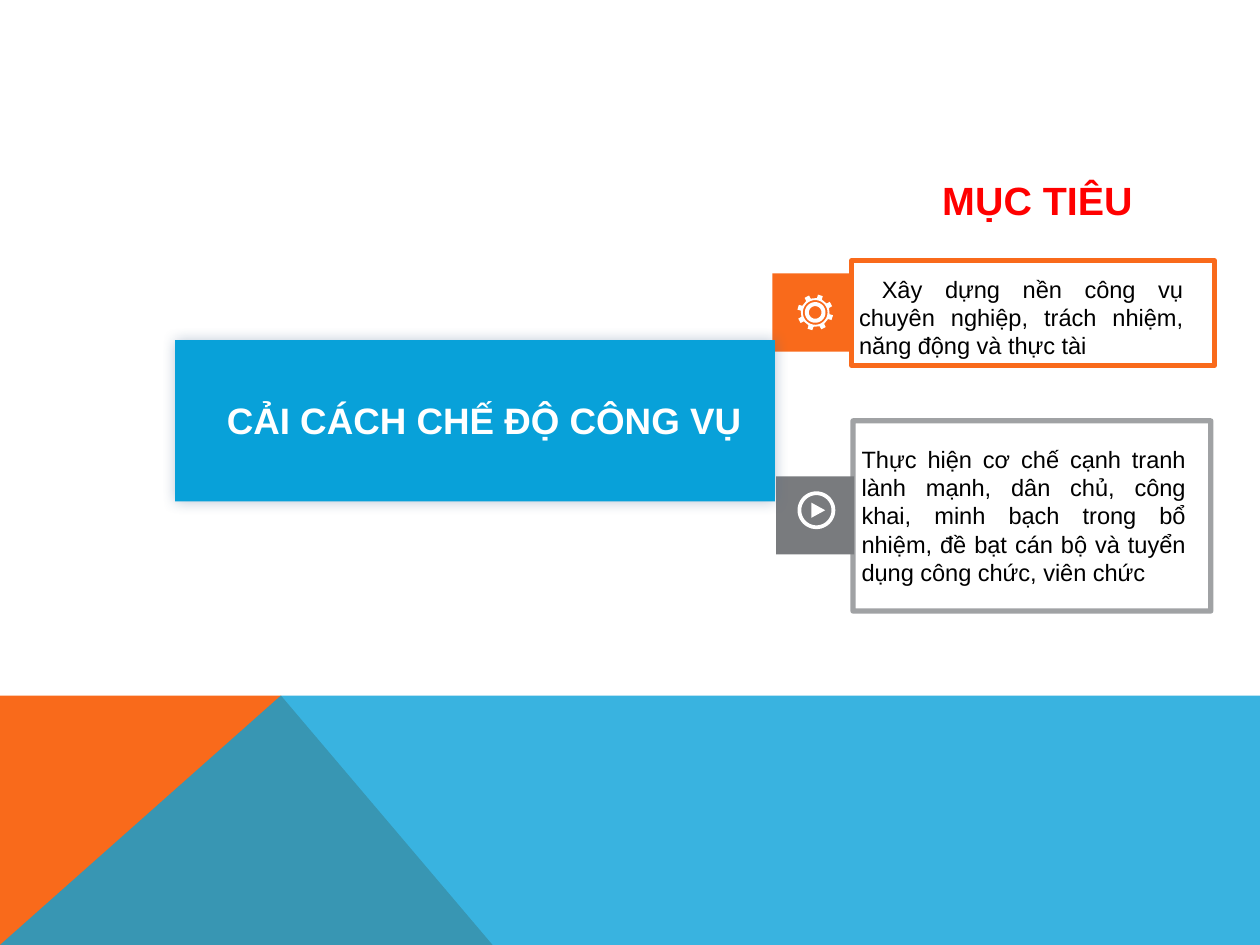
from math import cos, pi, sin

from lxml.etree import SubElement
from pptx import Presentation
from pptx.dml.color import RGBColor
from pptx.enum.shapes import MSO_SHAPE
from pptx.enum.text import MSO_ANCHOR, MSO_AUTO_SIZE, PP_ALIGN
from pptx.oxml.ns import qn
from pptx.util import Inches, Pt

ORANGE = RGBColor(0xF9, 0x6A, 0x1B)
BLUE = RGBColor(0x08, 0xA1, 0xD9)
GRAY = RGBColor(0x79, 0x7B, 0x7E)
SHADOW = RGBColor(0x50, 0x6E, 0x94)
RED = RGBColor(0xFF, 0, 0)
BLACK = RGBColor(0, 0, 0)
WHITE = RGBColor(0xFF, 0xFF, 0xFF)

COLUMNS, ROWS = 100, 75  # square grid cells
CELL = Inches(0.1)


def cells(*values):
    return [round(value * CELL) for value in values]


def set_opacity(color_parent, percent):
    color = next(color_parent.iter(qn("a:srgbClr")))
    SubElement(color, qn("a:alpha"), val=str(percent * 1000))


def circle(x, y, radius, steps=48):
    return [(x + radius * cos(2 * pi * i / steps), y + radius * sin(2 * pi * i / steps))
            for i in range(steps)]


def gear(x, y, inner, outer, teeth=8, start=-73):
    """Outline with a flat-topped tooth at each equal turn."""
    points = []
    for tooth in range(teeth):
        for offset, radius in ((-10, inner), (-8, outer), (8, outer), (10, inner)):
            angle = (start + tooth * 360 / teeth + offset) * pi / 180
            points.append((x + radius * cos(angle), y + radius * sin(angle)))
    return points


class SlideBuilder:
    font_name = "Arial"

    def __init__(self, slide):
        self.slide = slide

    def _paint(self, shape, fill=None, opacity=100):
        shape.shadow.inherit = False
        shape.line.fill.background()
        if fill is None:
            shape.fill.background()
            return
        shape.fill.solid()
        shape.fill.fore_color.rgb = fill
        if opacity < 100:
            set_opacity(shape.element.spPr, opacity)

    def box(self, area, fill=None):
        shape = self.slide.shapes.add_shape(MSO_SHAPE.RECTANGLE, *cells(*area))
        self._paint(shape, fill)
        return shape

    def frame(self, area, color, opacity=100):
        shape = self.box(area)
        shape.line.color.rgb = color
        shape.line.width = Pt(3)
        if opacity < 100:
            set_opacity(shape.line._ln, opacity)

    def glowing_box(self, area, fill):
        shape = self.box(area, fill)
        effects = shape.element.spPr.find(qn("a:effectLst"))
        shadow = SubElement(effects, qn("a:outerShdw"), blurRad=str(Pt(8)),
                            dist="0", dir="0", algn="ctr", rotWithShape="0")
        SubElement(shadow, qn("a:srgbClr"), val=str(SHADOW))
        set_opacity(shadow, 40)

    def outline(self, contours, fill, opacity=100):
        builder = None
        for contour in contours:
            first, *rest = [cells(*point) for point in contour]
            if builder is None:
                builder = self.slide.shapes.build_freeform(*first)
            else:
                builder.move_to(*first)
            builder.add_line_segments(rest, close=True)
        self._paint(builder.convert_to_shape(), fill, opacity)

    def _write(self, shape, area, text, align, anchor, **font_format):
        shape.left, shape.top, shape.width, shape.height = cells(*area)
        frame = shape.text_frame
        frame.text = text
        frame_format = {"word_wrap": True, "vertical_anchor": anchor,
                        "auto_size": MSO_AUTO_SIZE.SHAPE_TO_FIT_TEXT}
        for name, value in frame_format.items():
            setattr(frame, name, value)
        paragraph = frame.paragraphs[0]
        paragraph.alignment = align
        font = paragraph.runs[0].font
        color = font_format.pop("color")
        for name, value in {"name": self.font_name, **font_format}.items():
            setattr(font, name, value)
        font.color.rgb = color

    def text(self, area, text, align=PP_ALIGN.JUSTIFY, **font_format):
        shape = self.slide.shapes.add_textbox(*cells(*area))
        self._write(shape, area, text, align, MSO_ANCHOR.TOP, **font_format)

    def title(self, area, text, **font_format):
        shape = self.slide.shapes.title
        self._write(shape, area, text, PP_ALIGN.LEFT, MSO_ANCHOR.MIDDLE, **font_format)
        # Bring the title in front of its banner
        shape.element.getparent().append(shape.element)


def main():
    presentation = Presentation()
    presentation.slide_width, presentation.slide_height = cells(COLUMNS, ROWS)
    slide = presentation.slides.add_slide(presentation.slide_layouts[5])
    builder = SlideBuilder(slide)

    # Triangular footer
    horizon, peak = 55.2, 22.3
    builder.outline([[(0, ROWS), (0, horizon), (peak, horizon), (39.1, ROWS)]], ORANGE)
    builder.outline([[(0, ROWS), (peak, horizon), (COLUMNS, horizon), (COLUMNS, ROWS)]],
                    BLUE, opacity=80)

    # Goal frames and icon tiles
    builder.frame((67.7, 33.4, 28.4, 15.1), GRAY, opacity=70)
    builder.frame((67.6, 20.7, 28.8, 8.3), ORANGE)
    builder.box((61.3, 21.7, 6.2, 6.2), ORANGE)
    builder.box((61.6, 37.8, 6.2, 6.2), GRAY)

    # Play and gear icons
    play_x, play_y = 64.8, 40.5
    triangle = [(play_x - 0.4, play_y - 0.6), (play_x + 0.7, play_y), (play_x - 0.4, play_y + 0.6)]
    builder.outline([triangle, circle(play_x, play_y, 1.2), circle(play_x, play_y, 1.5)], WHITE)
    gear_x, gear_y = 64.7, 24.8
    rings = [circle(gear_x, gear_y, radius) for radius in (0.5, 0.82, 0.98)]
    builder.outline([gear(gear_x, gear_y, 1.15, 1.43), *rings], WHITE)

    # Goals
    builder.text((70.6, 13.5, 23.5, 4.8), "MỤC TIÊU", PP_ALIGN.CENTER,
                 size=Pt(22.5), bold=True, color=RED)
    goals = [
        ((67.2, 21.3, 27.7, 7.8),
         " Xây dựng nền công vụ chuyên nghiệp, trách nhiệm, năng động và thực tài"),
        ((67.4, 34.8, 27.7, 12.4),
         "Thực hiện cơ chế cạnh tranh lành mạnh, dân chủ, công khai, minh bạch trong "
         "bổ nhiệm, đề bạt cán bộ và tuyển dụng công chức, viên chức"),
    ]
    for area, goal in goals:
        builder.text(area, goal, size=Pt(13.5), color=BLACK)

    # Title banner
    builder.glowing_box((13.9, 27, 47.6, 12.8), BLUE)
    builder.title((17, 31.1, 44.5, 4.5), "CẢI CÁCH CHẾ ĐỘ CÔNG VỤ",
                  size=Pt(21), bold=True, color=WHITE)

    presentation.save("out.pptx")


if __name__ == "__main__":
    main()
